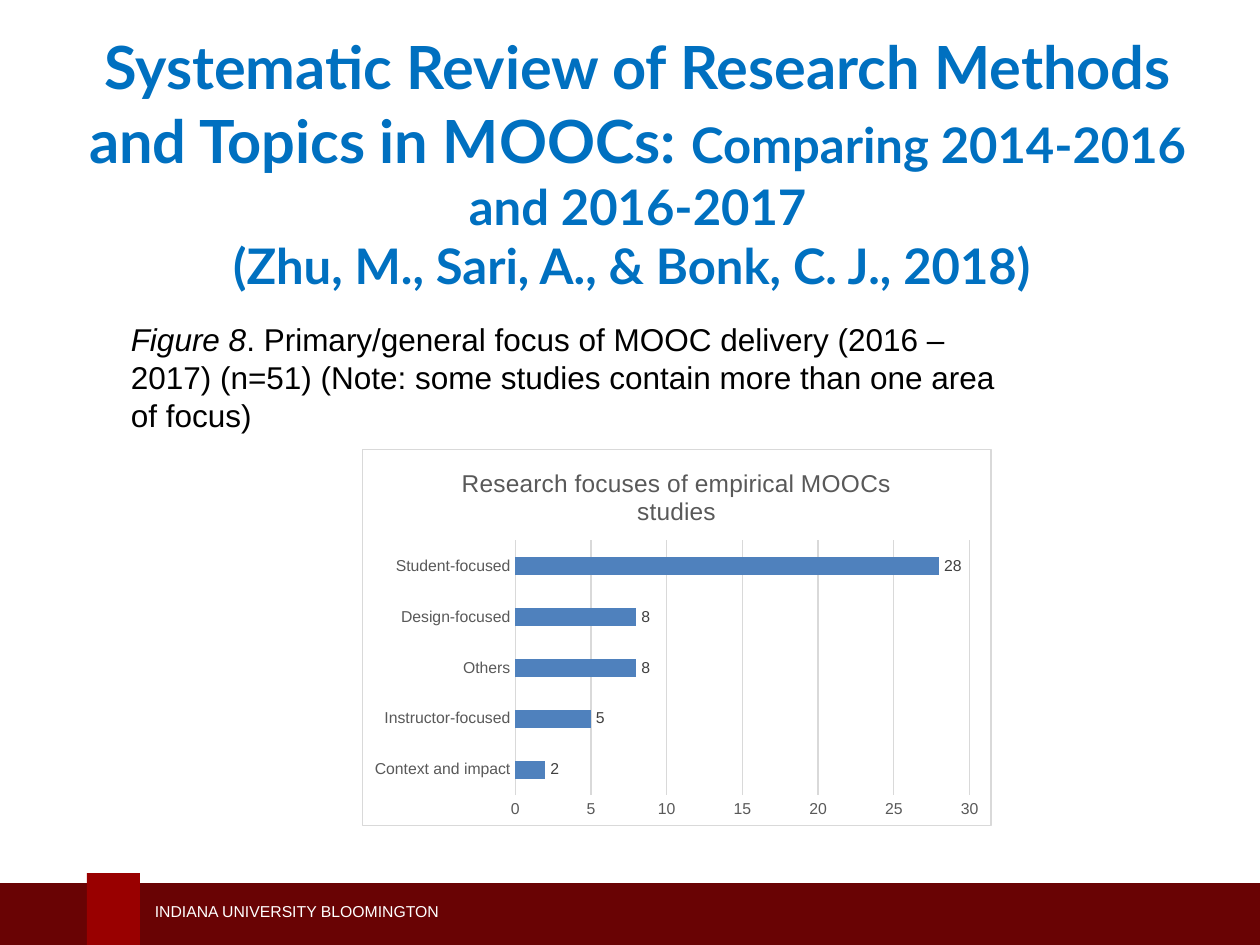
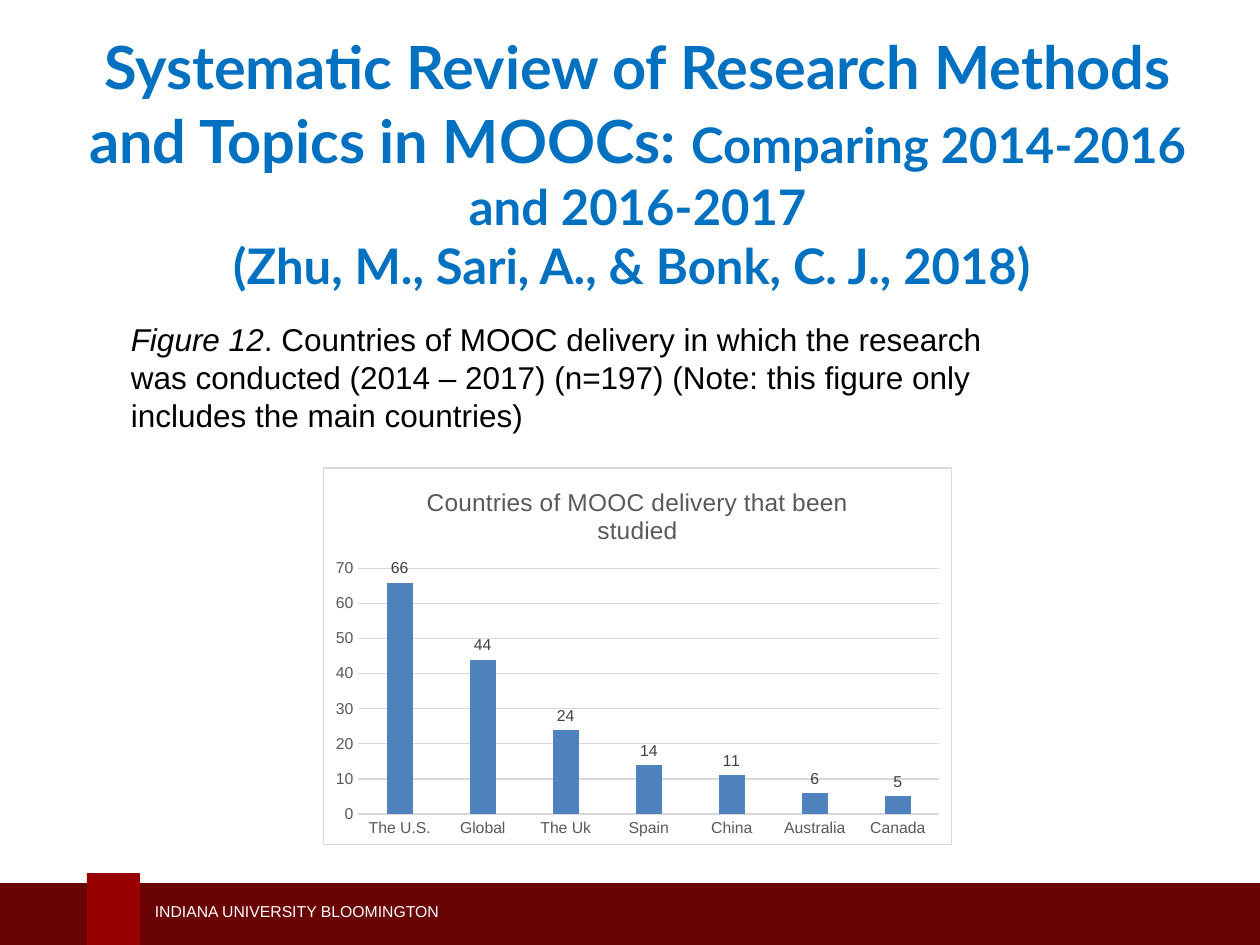
from lxml import etree
from pptx import Presentation
from pptx.chart.data import CategoryChartData
from pptx.dml.color import RGBColor
from pptx.enum.chart import XL_CHART_TYPE as ChartType
from pptx.enum.chart import XL_LABEL_POSITION as LabelPosition
from pptx.enum.chart import XL_TICK_MARK as TickMark
from pptx.enum.shapes import MSO_SHAPE as Shape
from pptx.enum.text import MSO_ANCHOR as Anchor
from pptx.enum.text import PP_ALIGN as Align
from pptx.oxml import parse_xml
from pptx.oxml.ns import nsdecls, qn
from pptx.util import Inches, Pt

CRIMSON = RGBColor(0x99, 0x00, 0x00)
DARK_CRIMSON = RGBColor(0x69, 0x03, 0x04)
TITLE_BLUE = RGBColor(0x00, 0x70, 0xC0)
BAR_BLUE = RGBColor(0x4F, 0x81, 0xBD)
WHITE = RGBColor(0xFF, 0xFF, 0xFF)
BLACK = RGBColor(0x00, 0x00, 0x00)
LABEL_GRAY = RGBColor(0x40, 0x40, 0x40)
AXIS_GRAY = RGBColor(0x59, 0x59, 0x59)
GRID_GRAY = RGBColor(0xD9, 0xD9, 0xD9)

BODY_FONT, TITLE_FONT = "Arial", "Lato"
HAIRLINE = Pt(0.75)

FOOTER_BOX = (0, 6.93, 10, 0.57)
TITLE_BOX = (0.57, 0.29, 8.98, 1.99)
CAPTION_BOX = (0.94, 2.49, 7.23, 1.01)
CHART_SIZE = (5, 3)

TITLE_SPANS = [
    ("Systematic Review of Research Methods and Topics in MOOCs:", 34),
    (" ", 36),
    ("Comparing 2014-2016 and 2016-2017", 28),
    ("\n", 28),
    ("(Zhu, M., Sari, A., & Bonk, C. J., 2018) ", 28),
]

FIGURES = [
    dict(
        number="Figure 8",
        caption=". Primary/general focus of MOOC delivery (2016 – 2017) (n=51) "
                "(Note: some studies contain more than one area of focus)",
        position=(2.87, 3.56),
        kind=ChartType.BAR_CLUSTERED,
        heading="Research focuses of empirical MOOCs studies",
        gap=182,
        overlap=0,
        values={"Context and impact": 2, "Instructor-focused": 5, "Others": 8,
                "Design-focused": 8, "Student-focused": 28},
    ),
    dict(
        number="Figure 12",
        caption=". Countries of MOOC delivery in which the research was conducted "
                "(2014 – 2017) (n=197) (Note: this figure only includes the main countries)",
        position=(2.56, 3.71),
        kind=ChartType.COLUMN_CLUSTERED,
        heading="Countries of MOOC delivery that been studied",
        gap=219,
        overlap=-27,
        values={"The U.S.": 66, "Global": 44, "The Uk": 24, "Spain": 14,
                "China": 11, "Australia": 6, "Canada": 5},
    ),
]


def set_font(font, size, color, name=BODY_FONT, bold=False):
    font.name = name
    font.size = Pt(size)
    font.bold = bold
    font.color.rgb = color


def add_block(page, left, top, width, height, color):
    block = page.shapes.add_shape(
        Shape.RECTANGLE, Inches(left), Inches(top), Inches(width), Inches(height))
    block.shadow.inherit = False
    block.fill.solid()
    block.fill.fore_color.rgb = color
    block.line.fill.background()


def add_text_frame(page, box, anchor=Anchor.TOP):
    frame = page.shapes.add_textbox(*map(Inches, box)).text_frame
    frame.word_wrap = True
    frame.vertical_anchor = anchor
    return frame


def add_footer(page, box):
    left, top, width, height = box
    add_block(page, left, top + 0.08, width, height - 0.08, DARK_CRIMSON)
    add_block(page, left + 0.69, top, 0.42, height, CRIMSON)
    frame = add_text_frame(page, (left + 1.13, top + 0.18, 3.95, 0.25), Anchor.MIDDLE)
    para = frame.paragraphs[0]
    para.text = "INDIANA UNIVERSITY BLOOMINGTON"
    set_font(para.font, 9, WHITE)


def add_title(page, box):
    para = add_text_frame(page, box, Anchor.MIDDLE).paragraphs[0]
    para.alignment = Align.CENTER
    set_font(para.font, 28, TITLE_BLUE, TITLE_FONT, bold=True)
    for text, size in TITLE_SPANS:
        if text == "\n":
            para.add_line_break()
            continue
        span = para.add_run()
        span.text = text
        span.font.size = Pt(size)


def add_caption(page, box, number, caption):
    para = add_text_frame(page, box).paragraphs[0]
    set_font(para.font, 18, BLACK)
    for text, italic in ((number, True), (caption, False)):
        span = para.add_run()
        span.text = text
        span.font.italic = italic


def frame_chart(chart):
    """Give the chart area a white fill and a thin gray border."""
    area = parse_xml(
        f'<c:spPr {nsdecls("c", "a")}>'
        f'<a:solidFill><a:srgbClr val="{WHITE}"/></a:solidFill>'
        f'<a:ln w="{int(HAIRLINE)}"><a:solidFill><a:srgbClr val="{GRID_GRAY}"/>'
        '</a:solidFill></a:ln></c:spPr>')
    chart_space = chart._chartSpace
    chart_space.find(qn("c:chart")).addnext(area)
    corners = chart_space.find(qn("c:roundedCorners"))
    if corners is None:
        corners = etree.Element(qn("c:roundedCorners"))
        date_system = chart_space.find(qn("c:date1904"))
        if date_system is None:
            chart_space.insert(0, corners)
        else:
            date_system.addnext(corners)
    corners.set("val", "0")


def style_axes(chart):
    for axis in (chart.category_axis, chart.value_axis):
        axis.major_tick_mark = axis.minor_tick_mark = TickMark.NONE
        set_font(axis.tick_labels.font, 9, AXIS_GRAY)
    chart.value_axis.has_major_gridlines = True
    chart.value_axis.format.line.fill.background()
    for line in (chart.category_axis.format.line,
                 chart.value_axis.major_gridlines.format.line):
        line.color.rgb = GRID_GRAY
        line.width = HAIRLINE


def style_bars(plot, gap, overlap):
    plot.gap_width = gap
    plot.overlap = overlap
    plot.vary_by_categories = False
    bars = plot.series[0]
    bars.format.fill.solid()
    bars.format.fill.fore_color.rgb = BAR_BLUE
    labels = bars.data_labels
    labels.show_value = True
    labels.position = LabelPosition.OUTSIDE_END
    set_font(labels.font, 9, LABEL_GRAY)


def add_bar_chart(page, box, kind, heading, values, gap, overlap):
    data = CategoryChartData()
    data.categories = list(values)
    data.add_series("Series 1", list(values.values()))
    chart = page.shapes.add_chart(kind, *map(Inches, box), data).chart
    set_font(chart.font, 10, BLACK)
    chart.has_legend = False
    chart.has_title = True
    title = chart.chart_title
    title.include_in_layout = False
    para = title.text_frame.paragraphs[0]
    para.text = heading
    set_font(para.font, 14, AXIS_GRAY)
    style_axes(chart)
    style_bars(chart.plots[0], gap, overlap)
    frame_chart(chart)


def add_figure_page(deck, number, caption, position, **chart_options):
    page = deck.slides.add_slide(deck.slide_layouts[6])
    add_footer(page, FOOTER_BOX)
    add_title(page, TITLE_BOX)
    add_caption(page, CAPTION_BOX, number, caption)
    add_bar_chart(page, position + CHART_SIZE, **chart_options)


def main():
    deck = Presentation()
    deck.slide_width, deck.slide_height = Inches(10), Inches(7.5)
    for figure in FIGURES:
        add_figure_page(deck, **figure)
    deck.save("out.pptx")


if __name__ == "__main__":
    main()
